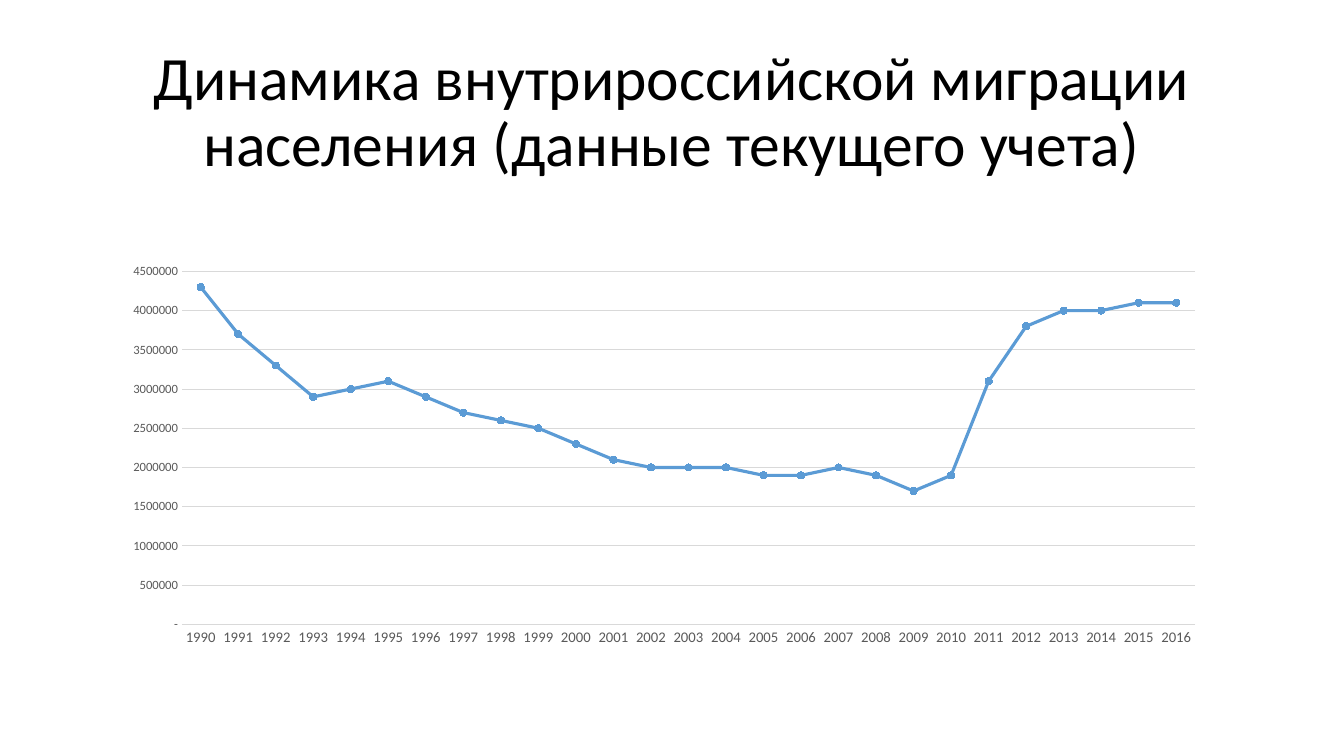
from lxml import etree
from pptx import Presentation
from pptx import util as u
from pptx.chart.data import CategoryChartData
from pptx.dml.color import RGBColor
from pptx.enum import chart as ch
from pptx.enum import text
from pptx.oxml.ns import qn

TITLE = "Динамика внутрироссийской миграции населения (данные текущего учета)"
FIRST_YEAR = 1990
MIGRANTS_MILLION = [
    4.3, 3.7, 3.3, 2.9, 3.0, 3.1, 2.9, 2.7, 2.6, 2.5,
    2.3, 2.1, 2.0, 2.0, 2.0, 1.9, 1.9, 2.0, 1.9, 1.7,
    1.9, 3.1, 3.8, 4.0, 4.0, 4.1, 4.1,
]
COLORS = {"title": "000000", "label": "595959", "grid": "D9D9D9", "series": "5B9BD5"}
FONT = "Calibri"
SLIDE_SIZE = (960, 540)
TITLE_BOX = (66, 28.75, 828, 104.4)
CHART_BOX = (77, 133.2, 828, 342.7)
PLOT_AREA = {"x": 0.064, "y": 0.177, "w": 0.874, "h": 0.736}


def points(values):
    return [u.Pt(value) for value in values]


def color(name):
    return RGBColor.from_string(COLORS[name])


def format_font(font, size, color_name):
    font.name = FONT
    font.size = u.Pt(size)
    font.color.rgb = color(color_name)


def format_line(line, color_name, width):
    line.color.rgb = color(color_name)
    line.width = u.Pt(width)


def add_text(slide, content, box, *, size, color_name, align, anchor, spacing):
    shape = slide.shapes.add_textbox(*points(box))
    frame = shape.text_frame
    frame.word_wrap = True
    frame.vertical_anchor = anchor
    paragraph = frame.paragraphs[0]
    paragraph.alignment = align
    paragraph.line_spacing = spacing
    run = paragraph.add_run()
    run.text = content
    format_font(run.font, size, color_name)


def place_plot_area(chart, area):
    """Fix the inner plot area, in fractions of the chart's size."""
    plot_area = chart.plots[0]._element.getparent()
    layout = plot_area.find(qn("c:layout"))
    if layout is None:
        layout = etree.Element(qn("c:layout"))
        plot_area.insert(0, layout)
    manual = etree.SubElement(layout, qn("c:manualLayout"))
    settings = {"layoutTarget": "inner", "xMode": "edge", "yMode": "edge", **area}
    for name, value in settings.items():
        etree.SubElement(manual, qn(f"c:{name}"), val=str(value))


def add_migration_chart(slide):
    data = CategoryChartData()
    data.categories = [str(FIRST_YEAR + i) for i in range(len(MIGRANTS_MILLION))]
    data.add_series("Series 1", [round(value * 1_000_000) for value in MIGRANTS_MILLION])
    chart = slide.shapes.add_chart(
        ch.XL_CHART_TYPE.LINE_MARKERS, *points(CHART_BOX), data).chart
    chart.has_title = False
    chart.has_legend = False
    format_font(chart.font, 10, "title")
    place_plot_area(chart, PLOT_AREA)

    years, migrants = chart.category_axis, chart.value_axis
    for axis, size in ((years, 10.5), (migrants, 9)):
        axis.major_tick_mark = axis.minor_tick_mark = ch.XL_TICK_MARK.NONE
        format_font(axis.tick_labels.font, size, "label")
    format_line(years.format.line, "grid", 0.75)
    migrants.format.line.fill.background()
    format_line(migrants.major_gridlines.format.line, "grid", 0.75)
    migrants.minimum_scale = 0
    migrants.maximum_scale = 4_500_000
    migrants.major_unit = 500_000
    migrants.tick_labels.number_format = '[=0]"-";General'
    migrants.tick_labels.number_format_is_linked = False

    chart.plots[0].vary_by_categories = False
    series = chart.plots[0].series[0]
    series.smooth = False
    format_line(series.format.line, "series", 2.25)
    marker = series.marker
    marker.style = ch.XL_MARKER_STYLE.CIRCLE
    marker.size = 5
    marker.format.fill.solid()
    marker.format.fill.fore_color.rgb = color("series")
    format_line(marker.format.line, "series", 0.75)


def main():
    presentation = Presentation()
    presentation.slide_width, presentation.slide_height = points(SLIDE_SIZE)
    slide = presentation.slides.add_slide(presentation.slide_layouts[6])
    add_text(slide, TITLE, TITLE_BOX, size=44, color_name="title",
             align=text.PP_ALIGN.CENTER, anchor=text.MSO_ANCHOR.MIDDLE, spacing=0.9)
    add_migration_chart(slide)
    presentation.save("out.pptx")


if __name__ == "__main__":
    main()
